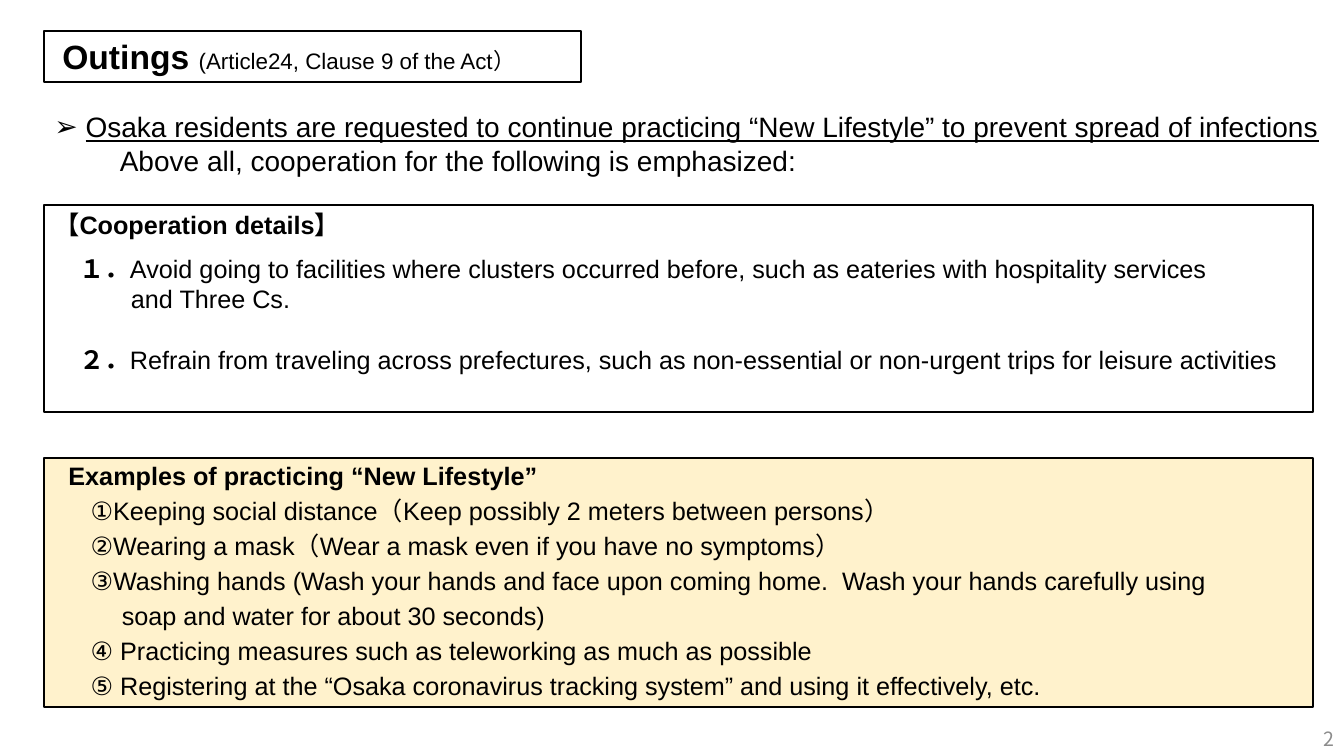
"""Build the slide on outings and practising the "New Lifestyle"."""
from dataclasses import dataclass, field

import pptx
import pptx.dml.color
import pptx.enum.shapes
import pptx.enum.text
import pptx.oxml.ns
import pptx.util
from lxml import etree

Inches = pptx.util.Inches
Pt = pptx.util.Pt
ALIGN = pptx.enum.text.PP_ALIGN
ANCHOR = pptx.enum.text.MSO_ANCHOR
LATIN, JAPANESE = "Arial", "Noto Sans CJK JP"
BLACK, GREY, CREAM = "000000", "8C8C8C", "FFF2CC"


@dataclass
class Phrase:
    text: str
    size: float = 18
    font: str = LATIN
    color: str = BLACK
    style: dict = field(default_factory=dict)


@dataclass
class Line:
    phrases: list[Phrase]
    left: float = 0
    first: float = 0
    bullet: str = ""
    layout: dict = field(default_factory=dict)


@dataclass
class Block:
    left: float
    top: float
    width: float
    height: float
    lines: list[Line]
    framed: bool = True
    fill: str = ""
    frame: dict = field(default_factory=dict)


def rgb(code: str) -> pptx.dml.color.RGBColor:
    """Turn a hex string into a colour."""
    return pptx.dml.color.RGBColor.from_string(code)


def apply(target: object, values: dict) -> None:
    """Set each named attribute on the target."""
    for name, value in values.items():
        setattr(target, name, value)


def write_phrase(paragraph, phrase: Phrase) -> None:
    """Add one run with its Latin and East Asian fonts."""
    run = paragraph.add_run()
    run.text = phrase.text
    apply(run.font, {"name": phrase.font, "size": Pt(phrase.size),
                     "bold": False, **phrase.style})
    run.font.color.rgb = rgb(phrase.color)
    latin = run.font._element.find(pptx.oxml.ns.qn("a:latin"))
    east_asian = etree.Element(pptx.oxml.ns.qn("a:ea"), typeface=JAPANESE)
    latin.addnext(east_asian)


def write_line(paragraph, line: Line) -> None:
    """Fill a paragraph with its indents, bullet and phrases."""
    apply(paragraph, {"alignment": ALIGN.LEFT, **line.layout})
    properties = paragraph._p.get_or_add_pPr()
    properties.set("marL", str(Inches(line.left)))
    properties.set("indent", str(Inches(line.first)))
    if line.bullet:
        etree.SubElement(properties, pptx.oxml.ns.qn("a:buFont"), typeface=LATIN)
        etree.SubElement(properties, pptx.oxml.ns.qn("a:buChar"), char=line.bullet)
    for phrase in line.phrases:
        write_phrase(paragraph, phrase)


def draw_block(slide, block: Block) -> None:
    """Draw a framed panel or a plain text box with its lines."""
    place = [Inches(n) for n in (block.left, block.top, block.width, block.height)]
    if block.framed:
        panel = slide.shapes.add_shape(pptx.enum.shapes.MSO_SHAPE.RECTANGLE, *place)
        panel.shadow.inherit = False
        panel.line.color.rgb = rgb(BLACK)
        panel.line.width = Pt(1.5)
        if block.fill:
            panel.fill.solid()
            panel.fill.fore_color.rgb = rgb(block.fill)
        else:
            panel.fill.background()
    else:
        panel = slide.shapes.add_textbox(*place)
    text = panel.text_frame
    apply(text, {"word_wrap": True, "vertical_anchor": ANCHOR.TOP, **block.frame})
    for index, line in enumerate(block.lines):
        write_line(text.add_paragraph() if index else text.paragraphs[0], line)


BOLD = {"bold": True}
DETAIL = {"line_spacing": Pt(21.5)}
EXAMPLE = {"line_spacing": Pt(25)}


def detail(number: str, text: str, gap: float) -> Line:
    """Return a numbered cooperation detail with space above it."""
    return Line([Phrase(number, font=JAPANESE, style=BOLD), Phrase(text)],
                first=0.25, layout={**DETAIL, "space_before": Pt(gap)})


def example(text: str, left: float = 0.36) -> Line:
    """Return one line of the list of examples."""
    return Line([Phrase(text)], left=left, layout=EXAMPLE)


BLOCKS = [
    Block(0.44, 0.31, 5.32, 0.5, [
        Line([Phrase("Outings ", 24, style=BOLD),
              Phrase("(Article24, Clause 9 of the Act）", 16)],
             left=0.08, layout={"space_before": Pt(6)}),
    ]),
    Block(0.44, 1.04, 12.77, 1.11, [
        Line([Phrase("Osaka residents are requested to continue practicing "
                     "“New Lifestyle” to prevent spread of infections",
                     20, style={"underline": True})],
             left=0.31, first=-0.31, bullet="➢"),
        Line([Phrase("Above all, cooperation for the following is emphasized:", 20)],
             left=0.65),
    ], framed=False),
    Block(0.44, 2.03, 12.58, 2.06, [
        Line([Phrase("【", font=JAPANESE, style=BOLD),
              Phrase("Cooperation details", style=BOLD),
              Phrase("】", font=JAPANESE, style=BOLD)], layout=DETAIL),
        detail("１．", "Avoid going to facilities where clusters occurred before, "
               "such as eateries with hospitality services", 10),
        Line([Phrase("and Three Cs.")], left=0.76, layout=DETAIL),
        detail("２．", "Refrain from traveling across prefectures, such as "
               "non-essential or non-urgent trips for leisure activities", 22),
    ], frame={"margin_right": 0}),
    Block(10.33, 7.13, 3, 0.4, [
        Line([Phrase("2", 14, JAPANESE, GREY)], layout={"alignment": ALIGN.RIGHT}),
    ], framed=False, frame={"vertical_anchor": ANCHOR.MIDDLE}),
    Block(0.44, 4.54, 12.58, 2.47, [
        Line([Phrase("Examples of practicing “New Lifestyle”", style=BOLD)],
             left=0.14, layout={"line_spacing": Pt(20)}),
        example("①Keeping social distance（Keep possibly 2 meters between persons）"),
        example("②Wearing a mask（Wear a mask even if you have no symptoms）"),
        example("③Washing hands (Wash your hands and face upon coming home.  "
                "Wash your hands carefully using"),
        example("soap and water for about 30 seconds)", left=0.67),
        example("④ Practicing measures such as teleworking as much as possible"),
        example("⑤ Registering at the “Osaka coronavirus tracking system” "
                "and using it effectively, etc."),
    ], fill=CREAM),
]


def main() -> None:
    """Create the presentation and save it."""
    deck = pptx.Presentation()
    apply(deck, {"slide_width": Inches(13.33), "slide_height": Inches(7.5)})
    slide = deck.slides.add_slide(deck.slide_layouts[6])
    for block in BLOCKS:
        draw_block(slide, block)
    deck.save("out.pptx")


if __name__ == "__main__":
    main()
